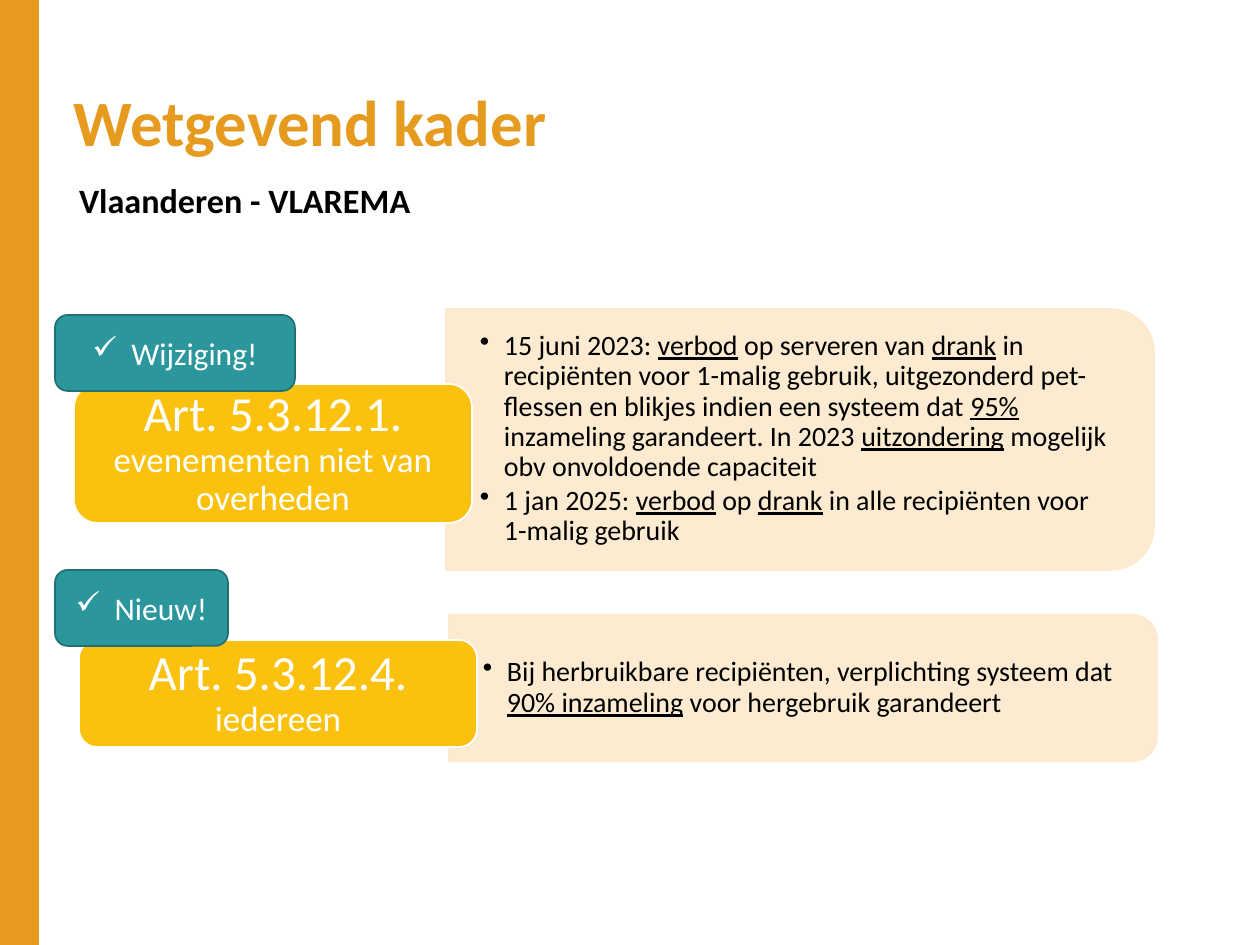
"""Build the slide on the Flemish VLAREMA rules for drink containers at events."""
import pptx
import pptx.dml.color
import pptx.enum.shapes
import pptx.enum.text
import pptx.oxml.ns
import pptx.util
from lxml import etree

PX = 914400 / 126
THEME = {
    "font": "Calibri",
    "accent": "E69B1F", "panel": "FDE9CC", "article": "FAC20E",
    "badge": "2B979D", "badge_line": "207074", "light": "FFFFFF", "dark": "000000",
    "title_size": 37, "subtitle_size": 19.5, "article_size": 28,
    "scope_size": 20, "badge_size": 18, "body_size": 16,
}
SHAPES = pptx.enum.shapes.MSO_SHAPE
MIDDLE = pptx.enum.text.MSO_ANCHOR.MIDDLE
CENTER = pptx.enum.text.PP_ALIGN.CENTER

presentation = pptx.Presentation()
presentation.slide_width = round(1260 * PX)
presentation.slide_height = round(945 * PX)
slide = presentation.slides.add_slide(presentation.slide_layouts[6])


def add_box(box, kind=None, fill=None, line=None, margins=(0, 0)):
    """Add a text box, or a preset shape when a kind is given."""
    frame = [round(value * PX) for value in box]
    if kind is None:
        shape = slide.shapes.add_textbox(*frame)
    else:
        shape = slide.shapes.add_shape(kind, *frame)
        shape.shadow.inherit = False
        shape.fill.solid()
        shape.fill.fore_color.rgb = pptx.dml.color.RGBColor.from_string(THEME[fill])
        if line:
            shape.line.color.rgb = pptx.dml.color.RGBColor.from_string(THEME[line])
            shape.line.width = pptx.util.Pt(1)
        else:
            shape.line.fill.background()
    text_frame = shape.text_frame
    text_frame.word_wrap = True
    text_frame.vertical_anchor = MIDDLE
    text_frame.margin_left = text_frame.margin_right = round(margins[0] * PX)
    text_frame.margin_top = text_frame.margin_bottom = round(margins[1] * PX)
    return shape


def style(paragraph, size, color, bullet=None, indent=0, spacing=0.9):
    """Set the bullet, line spacing and font of a paragraph."""
    if bullet:
        properties = paragraph._p.get_or_add_pPr()
        properties.set("marL", str(round(indent * PX)))
        properties.set("indent", str(round(-indent * PX)))
        etree.SubElement(properties, pptx.oxml.ns.qn("a:buChar")).set("char", bullet)
    paragraph.line_spacing = spacing
    paragraph.font.name = THEME["font"]
    paragraph.font.size = pptx.util.Pt(THEME[size])
    paragraph.font.color.rgb = pptx.dml.color.RGBColor.from_string(THEME[color])


add_box((0, 0, 39, 945), SHAPES.RECTANGLE, "accent")

headings = [
    ("Wetgevend kader", (74, 67, 517, 117), "title_size", "accent", MIDDLE),
    ("Vlaanderen - VLAREMA", (79, 184, 407, 53), "subtitle_size", "dark",
     pptx.enum.text.MSO_ANCHOR.TOP),
]
for text, box, size, color, anchor in headings:
    heading = add_box(box)
    heading.text_frame.vertical_anchor = anchor
    paragraph = heading.text_frame.paragraphs[0]
    paragraph.text = text
    style(paragraph, size, color)
    paragraph.font.bold = True

articles = [
    {
        "panel": (446, 309, 708, 261), "body": (446, 321, 696, 236),
        "article": (74, 384, 398, 139), "badge": (55, 315, 240, 76),
        "label": "Wijziging!", "name": "Art. 5.3.12.1.",
        "scope": "evenementen niet van overheden",
        "rules": [
            "15 juni 2023: _verbod_ op serveren van _drank_ in recipiënten voor 1-malig "
            "gebruik, uitgezonderd pet-flessen en blikjes indien een systeem dat _95%_ "
            "inzameling garandeert. In 2023 _uitzondering_ mogelijk obv onvoldoende capaciteit",
            "1 jan 2025: _verbod_ op _drank_ in alle recipiënten voor 1-malig gebruik",
        ],
    },
    {
        "panel": (449, 615, 708, 146), "body": (449, 622, 702, 132),
        "article": (79, 640, 398, 107), "badge": (55, 570, 173, 76),
        "label": "Nieuw!", "name": "Art. 5.3.12.4.", "scope": "iedereen",
        "rules": [
            "Bij herbruikbare recipiënten, verplichting systeem dat _90% inzameling_ "
            "voor hergebruik garandeert",
        ],
    },
]
for article in articles:
    left, top, width, height = article["panel"]
    upright = (left + (width - height) / 2, top + (height - width) / 2, height, width)
    panel = add_box(upright, SHAPES.ROUND_2_SAME_RECTANGLE, "panel", "panel")
    panel.rotation = 90
    for color in panel._element.spPr.iter(pptx.oxml.ns.qn("a:srgbClr")):
        etree.SubElement(color, pptx.oxml.ns.qn("a:alpha")).set("val", "90000")

    body = add_box(article["body"], margins=(34, 18)).text_frame
    for index, rule in enumerate(article["rules"]):
        paragraph = body.add_paragraph() if index else body.paragraphs[0]
        style(paragraph, "body_size", "dark", "•", 24)
        paragraph.space_after = pptx.util.Pt(2)
        for position, part in enumerate(rule.split("_")):
            run = paragraph.add_run()
            run.text = part
            if position % 2:
                run.font.underline = True

    card = add_box(article["article"], SHAPES.ROUNDED_RECTANGLE, "article", "light", (15, 8))
    paragraph = card.text_frame.paragraphs[0]
    paragraph.alignment = CENTER
    style(paragraph, "article_size", "light")
    paragraph.add_run().text = article["name"]
    paragraph.add_line_break()
    scope = paragraph.add_run()
    scope.text = article["scope"]
    scope.font.size = pptx.util.Pt(THEME["scope_size"])

    badge = add_box(article["badge"], SHAPES.ROUNDED_RECTANGLE, "badge", "badge_line", (13, 6))
    paragraph = badge.text_frame.paragraphs[0]
    paragraph.text = article["label"]
    paragraph.alignment = CENTER
    style(paragraph, "badge_size", "light", "✓", 39, 1.0)

presentation.save("out.pptx")
